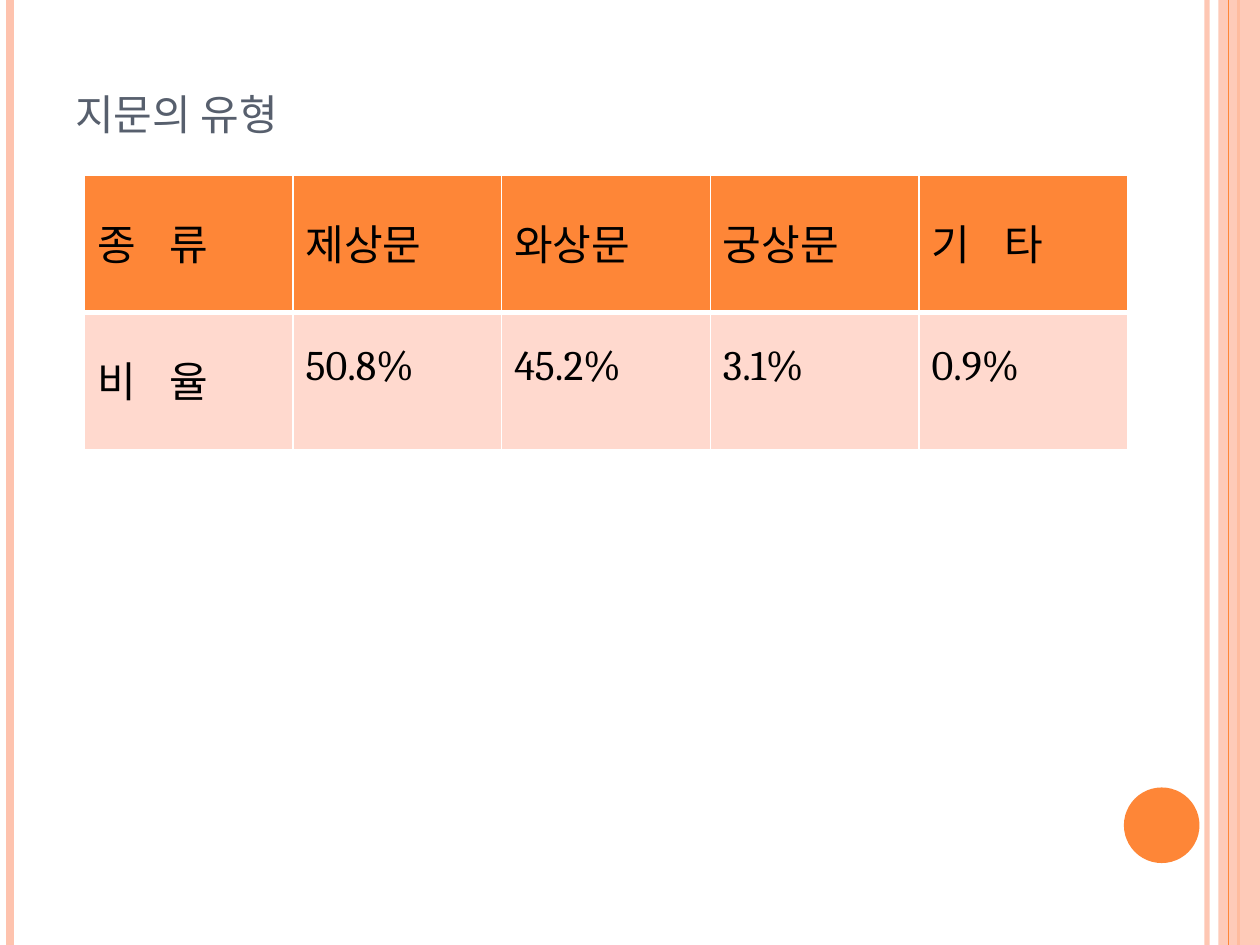
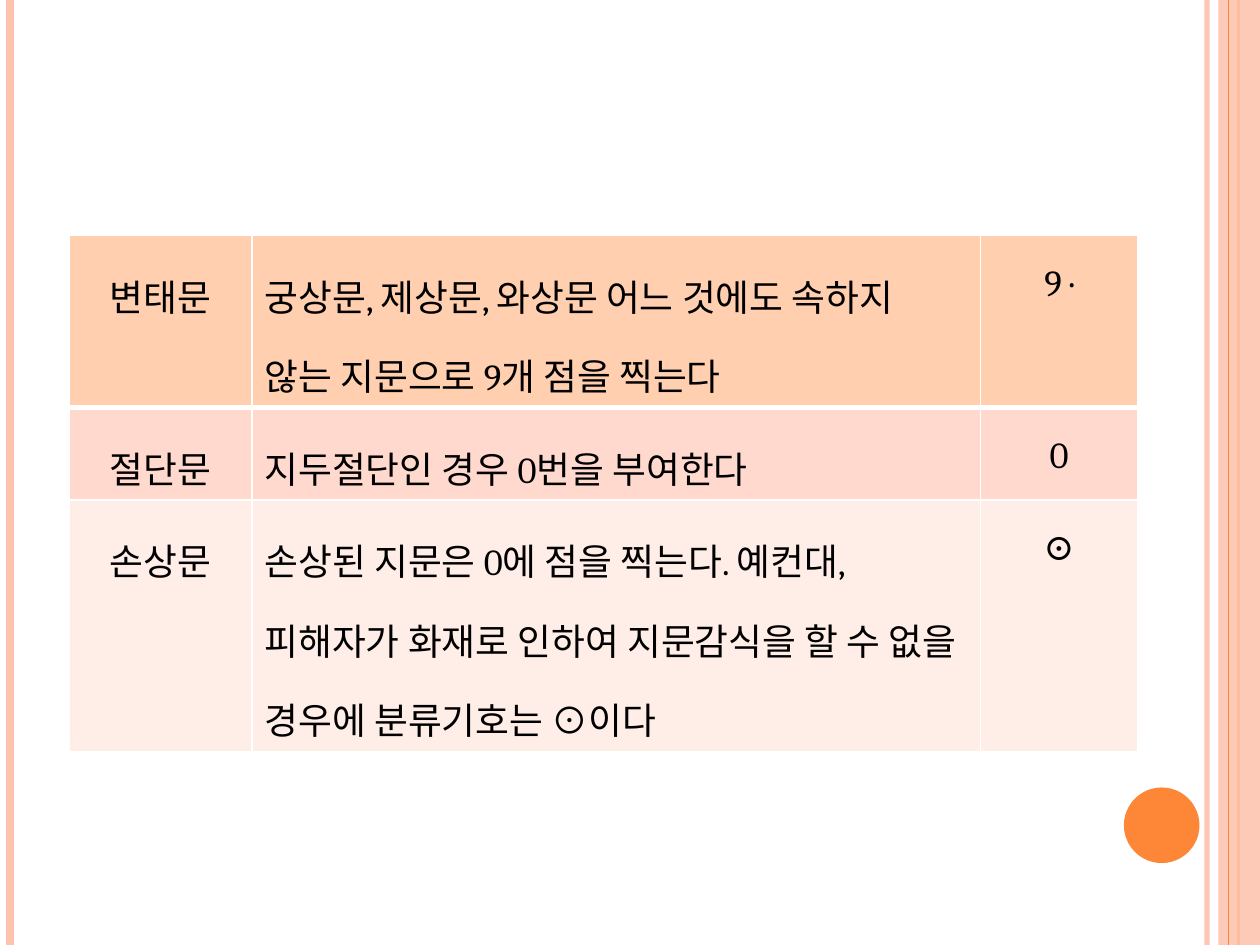
from lxml import etree
from pptx import Presentation
from pptx import util as u
from pptx.dml.color import RGBColor
from pptx.enum import shapes, text
from pptx.oxml import ns

COLORS = {
    "orange": "FE8637", "peach": "FEC3AE", "slate": "575F6D", "black": "000000",
    "white": "FFFFFF", "apricot": "FFCFAF", "pink": "FFD9CE", "pale": "FFEDE8",
}
FONT = "Cambria"
WIDTH, HEIGHT = 10, 7.5

LEFT, CENTER = text.PP_ALIGN.LEFT, text.PP_ALIGN.CENTER

SLIDES = [
    {
        "title": "지문의 유형",
        "table": {
            "at": (0.67, 1.39), "cols": [1.656] * 5, "rows": [1.09] * 2, "size": 24,
            "fills": ["orange", "pink"], "aligns": [LEFT] * 5, "wide_gaps": ["종 류", "기 타", "비 율"],
            "cells": [
                ["종 류", "제상문", "와상문", "궁상문", "기 타"],
                ["비 율", "50.8%", "45.2%", "3.1%", "0.9%"],
            ],
        },
    },
    {
        "table": {
            "at": (0.55, 1.87), "cols": [1.45, 5.78, 1.25], "rows": [0.93, 0.48, 1.39], "size": 21,
            "fills": ["apricot", "pink", "pale"], "aligns": [CENTER, LEFT, CENTER], "wide_gaps": [],
            "cells": [
                ["변태문", "궁상문, 제상문, 와상문 어느 것에도 속하지 않는 지문으로 9개 점을 찍는다", "9 ·"],
                ["절단문", "지두절단인 경우 0번을 부여한다", "0"],
                ["손상문", "손상된 지문은 0에 점을 찍는다. 예컨대, 피해자가 화재로 인하여 지문감식을 할 수 "
                 "없을 경우에 분류기호는 ⊙이다", "⊙"],
            ],
        },
    },
]

STRIPES_BELOW = [(9.58, "peach", 3, 93), (0.08, "peach", 4.5, 100), (9.83, "orange", 1.5, 100)]
STRIPES_ABOVE = [(9.75, "orange", 0.75, 100)]
BAND = (9.67, 0, 0.33, HEIGHT)
DISC = (8.92, 6.25, 0.6, 0.6)
TITLE = (0.5, 0.3, 8.17, 0.87)
GAP_SPACING = 1400


def rgb(color):
    return RGBColor.from_string(COLORS[color])


def inches(values):
    return [u.Inches(value) for value in values]


def apply_format(target, values):
    for name, value in values.items():
        setattr(target, name, value)


def set_alpha(properties, percent):
    if percent < 100:
        for color in properties.iter(ns.qn("a:srgbClr")):
            etree.SubElement(color, ns.qn("a:alpha"), val=str(percent * 1000))


def add_stripe(slide, x, color, width, alpha):
    stripe = slide.shapes.add_connector(
        shapes.MSO_CONNECTOR.STRAIGHT, *inches((x, 0, x, HEIGHT)))
    stripe.line.color.rgb = rgb(color)
    stripe.line.width = u.Pt(width)
    properties = stripe._element.spPr
    set_alpha(properties, alpha)
    etree.SubElement(properties, ns.qn("a:effectLst"))


def add_plain_shape(slide, kind, place, color, alpha=100):
    plain = slide.shapes.add_shape(kind, *inches(place))
    plain.shadow.inherit = False
    plain.fill.solid()
    plain.fill.fore_color.rgb = rgb(color)
    plain.line.fill.background()
    set_alpha(plain._element.spPr, alpha)


def add_frame(slide):
    for stripe in STRIPES_BELOW:
        add_stripe(slide, *stripe)
    add_plain_shape(slide, shapes.MSO_SHAPE.RECTANGLE, BAND, "peach", 87)
    for stripe in STRIPES_ABOVE:
        add_stripe(slide, *stripe)
    add_plain_shape(slide, shapes.MSO_SHAPE.OVAL, DISC, "orange")


def add_run(paragraph, words, size, color):
    run = paragraph.add_run()
    run.text = words
    apply_format(run.font, {"name": FONT, "size": u.Pt(size), "bold": False})
    run.font.color.rgb = rgb(color)
    return run._r.get_or_add_rPr()


def add_title(slide, words):
    title = slide.shapes.add_textbox(*inches(TITLE))
    apply_format(title.text_frame, {"word_wrap": True, "vertical_anchor": text.MSO_ANCHOR.BOTTOM})
    add_run(title.text_frame.paragraphs[0], words, 30, "slate").set("cap", "small")


def add_borders(cell, top, bottom):
    properties = cell._tc.get_or_add_tcPr()
    for side, width in {"L": 1, "R": 1, "T": top, "B": bottom}.items():
        border = etree.SubElement(properties, ns.qn("a:ln" + side), w=str(u.Pt(width)))
        fill = etree.SubElement(border, ns.qn("a:solidFill"))
        etree.SubElement(fill, ns.qn("a:srgbClr"), val=COLORS["white"])


def fill_cell(cell, words, content, row, col):
    add_borders(cell, 3 if row == 1 else 1, 3 if row == 0 else 1)
    cell.fill.solid()
    cell.fill.fore_color.rgb = rgb(content["fills"][row])
    paragraph = cell.text_frame.paragraphs[0]
    apply_format(paragraph, {"alignment": content["aligns"][col], "line_spacing": 1.5})
    pieces = words.partition(" ") if words in content["wide_gaps"] else [words]
    for piece in pieces:
        properties = add_run(paragraph, piece, content["size"], "black")
        if piece == " ":
            properties.set("spc", str(GAP_SPACING))


def add_fingerprint_table(slide, content):
    cols, rows = content["cols"], content["rows"]
    place = inches((*content["at"], sum(cols), sum(rows)))
    table = slide.shapes.add_table(len(rows), len(cols), *place).table
    apply_format(table, {"first_row": False, "horz_banding": False})
    for column, width in zip(table.columns, cols):
        column.width = u.Inches(width)
    for line, height in zip(table.rows, rows):
        line.height = u.Inches(height)
    for row, entries in enumerate(content["cells"]):
        for col, words in enumerate(entries):
            fill_cell(table.cell(row, col), words, content, row, col)


def main():
    deck = Presentation()
    apply_format(deck, {"slide_width": u.Inches(WIDTH), "slide_height": u.Inches(HEIGHT)})
    for content in SLIDES:
        slide = deck.slides.add_slide(deck.slide_layouts[6])
        add_frame(slide)
        if "title" in content:
            add_title(slide, content["title"])
        add_fingerprint_table(slide, content["table"])
    deck.save("out.pptx")


if __name__ == "__main__":
    main()
